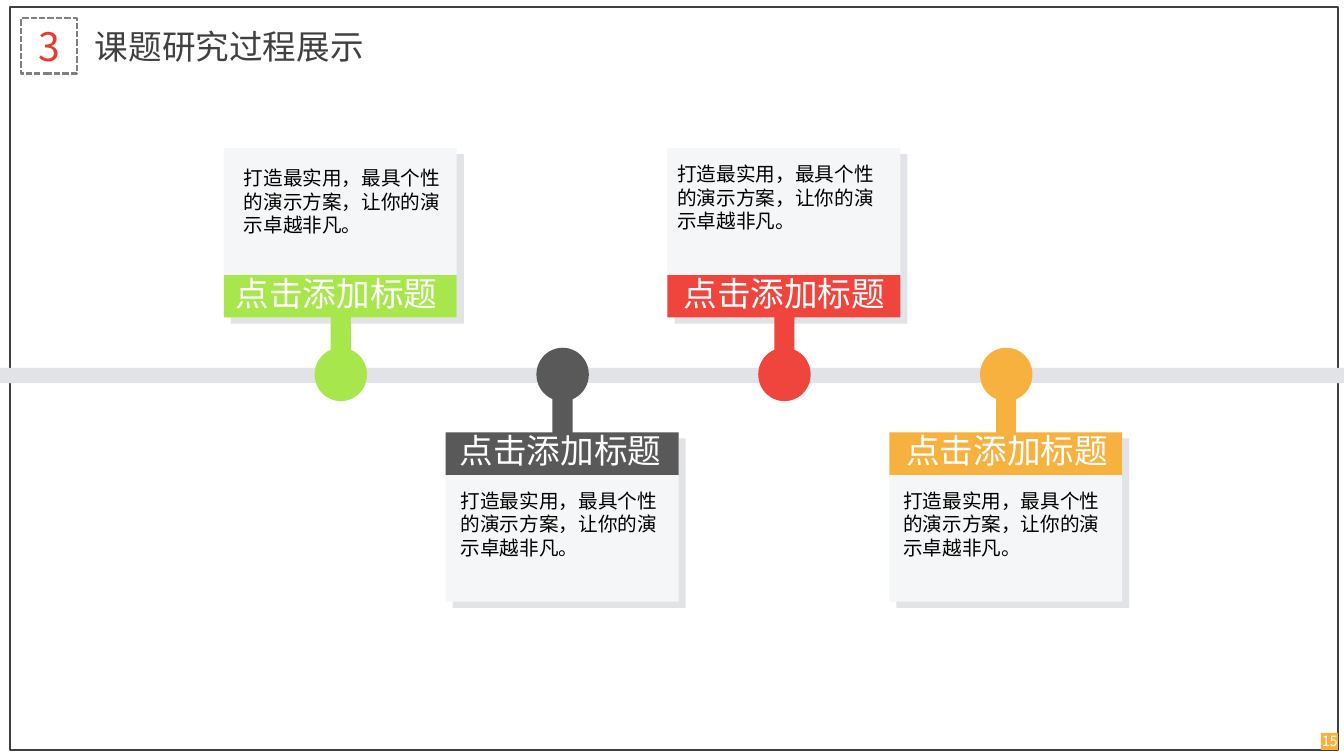
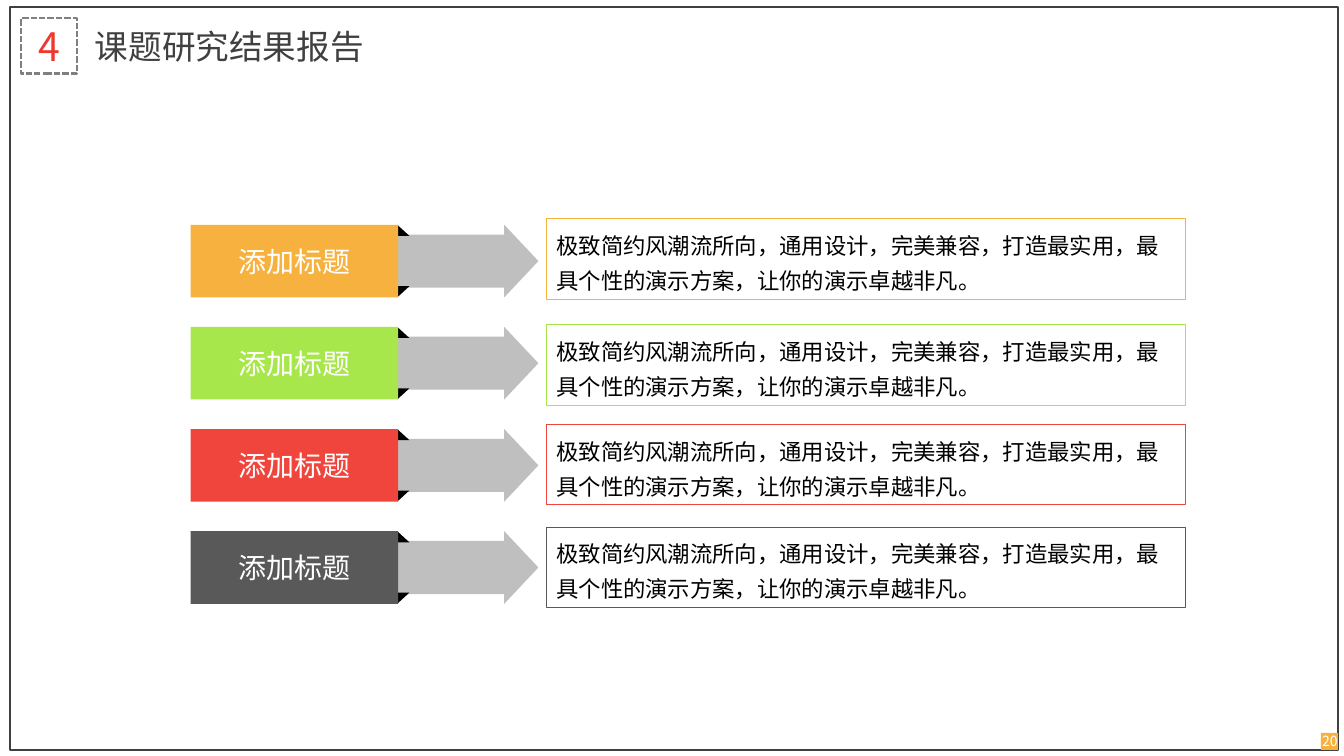
from lxml import etree
from pptx import Presentation
from pptx.dml.color import RGBColor
from pptx.enum.dml import MSO_LINE_DASH_STYLE as DASH
from pptx.enum.shapes import MSO_SHAPE as SHAPE
from pptx.enum.text import MSO_ANCHOR as ANCHOR, MSO_AUTO_SIZE as AUTO_SIZE, PP_ALIGN as ALIGN
from pptx.oxml.ns import qn
from pptx.util import Inches, Pt

# Shared palette and fonts
GREEN, GRAY, RED, ORANGE = "A8E74B", "595959", "EF453D", "F7B13F"
DARK, SILVER, PANEL = "404040", "E1E3E6", "F5F6F7"
WHITE, BLACK = "FFFFFF", "000000"
FONT, HEADING_FONT = "Noto Sans CJK SC", "TeX Gyre Adventor"
color = RGBColor.from_string


def add_box(shapes, kind, box, fill=None, line=None, line_width=1):
    shape = shapes.add_shape(kind, *[Inches(value) for value in box])
    shape.shadow.inherit = False
    if fill:
        shape.fill.solid()
        shape.fill.fore_color.rgb = color(fill)
    else:
        shape.fill.background()
    if line:
        shape.line.color.rgb = color(line)
        shape.line.width = Pt(line_width)
    else:
        shape.line.fill.background()
    return shape


def set_text(shape, text, size, text_color, font=FONT, align=ALIGN.LEFT,
             anchor=ANCHOR.MIDDLE, wrap=True, inset=None):
    frame = shape.text_frame
    frame.text = text
    frame.word_wrap = wrap
    frame.auto_size = AUTO_SIZE.NONE
    frame.vertical_anchor = anchor
    if inset is not None:
        frame.margin_left = frame.margin_right = Inches(inset)
        frame.margin_top = frame.margin_bottom = Inches(inset)
    paragraph = frame.paragraphs[0]
    paragraph.alignment = align
    run = paragraph.runs[0]
    run.font.size = Pt(size)
    run.font.name = font
    run.font.color.rgb = color(text_color)
    # East Asian characters take their own typeface entry
    etree.SubElement(run.font._element, qn("a:ea")).set("typeface", font)
    return paragraph


presentation = Presentation()
presentation.slide_width = Inches(13.33)
presentation.slide_height = Inches(7.5)

# Frame, section badge, title and page number on every slide
slides = []
for section, title_text, page in [("3", "课题研究过程展示", "15"),
                                  ("4", "课题研究结果报告", "20")]:
    slide = presentation.slides.add_slide(presentation.slide_layouts[5])
    slides.append(slide)
    add_box(slide.shapes, SHAPE.RECTANGLE, (0.1, 0.07, 13.17, 7.37), line=DARK)

    badge = add_box(slide.shapes, SHAPE.RECTANGLE, (0.21, 0.18, 0.55, 0.55),
                    line="808080", line_width=1.5)
    badge.line.dash_style = DASH.SQUARE_DOT
    set_text(badge, section, 28, "ED382D", align=ALIGN.CENTER, inset=0)

    title = slide.shapes.title
    title.left, title.top = Inches(0.84), Inches(0.18)
    title.width, title.height = Inches(3.59), Inches(0.55)
    set_text(title, title_text, 24, DARK)

    add_box(slide.shapes, SHAPE.RECTANGLE, (13.1, 7.27, 0.17, 0.17), ORANGE)
    page_number = slide.shapes.add_textbox(Inches(12.97), Inches(7.27),
                                           Inches(0.44), Inches(0.17))
    set_text(page_number, page, 10, WHITE, align=ALIGN.CENTER)

timeline, results = slides

# Timeline: cards alternate above and below the bar
add_box(timeline.shapes, SHAPE.RECTANGLE, (0, 3.65, 13.33, 0.15), SILVER)
CARD_PITCH, CARD_WIDTH, CARD_HEIGHT, BAND_HEIGHT = 2.2, 2.31, 1.68, 0.42
cards = [  # colour, heading left, body left, body top
    (GREEN, 2.24, 2.32, 1.6),
    (GRAY, 4.46, 4.47, 4.8),
    (RED, 6.68, 6.62, 1.56),
    (ORANGE, 8.89, 8.86, 4.8),
]
for index, (card_color, heading_left, body_left, body_top) in enumerate(cards):
    left = 2.22 + index * CARD_PITCH
    above = index % 2 == 0
    card_top = 1.47 if above else 4.29
    band_top = card_top + CARD_HEIGHT - BAND_HEIGHT if above else card_top
    stem_top = 3.03 if above else 3.83

    for kind, box, fill in [
        (SHAPE.OVAL, (left + 0.9, 3.45, 0.52, 0.53), card_color),
        (SHAPE.RECTANGLE, (left + 0.07, card_top + 0.06, CARD_WIDTH, CARD_HEIGHT), SILVER),
        (SHAPE.RECTANGLE, (left, card_top, CARD_WIDTH, CARD_HEIGHT), PANEL),
        (SHAPE.RECTANGLE, (left, band_top, CARD_WIDTH, BAND_HEIGHT), card_color),
        (SHAPE.RECTANGLE, (left + 1.06, stem_top, 0.2, 0.58), card_color),
    ]:
        add_box(timeline.shapes, kind, box, fill)

    heading = timeline.shapes.add_textbox(Inches(heading_left), Inches(band_top - 0.07),
                                          Inches(2.22), Inches(0.5))
    set_text(heading, "点击添加标题", 24, WHITE, HEADING_FONT, anchor=ANCHOR.TOP, wrap=False)
    body = timeline.shapes.add_textbox(Inches(body_left), Inches(body_top),
                                       Inches(2.3), Inches(0.81))
    set_text(body, "打造最实用，最具个性的演示方案，让你的演示卓越非凡。", 14, BLACK,
             anchor=ANCHOR.TOP)

# Results: a folded ribbon with an arrow leads to each outlined text
ROW_PITCH, ROW_HEIGHT = 3.04 / 3, 0.72
FOLD_WIDTH, FOLD_HEIGHT = 0.12, 0.11
rows = [(ORANGE, 2.17), (GREEN, 3.22), (RED, 4.21), (GRAY, 5.23)]
for index, (row_color, text_top) in enumerate(rows):
    top = 2.23 + index * ROW_PITCH
    arrow = add_box(results.shapes, SHAPE.RIGHT_ARROW, (3.03, top, 2.31, ROW_HEIGHT), "BFBFBF")
    arrow.adjustments[0], arrow.adjustments[1] = 0.73, 0.47

    ribbon = results.shapes.add_group_shape()
    lower_fold = add_box(ribbon.shapes, SHAPE.RIGHT_TRIANGLE,
                         (3.94, top + ROW_HEIGHT - FOLD_HEIGHT, FOLD_WIDTH, FOLD_HEIGHT), BLACK)
    lower_fold._element.spPr.find(qn("a:xfrm")).set("flipV", "1")
    add_box(ribbon.shapes, SHAPE.RIGHT_TRIANGLE, (3.94, top, FOLD_WIDTH, FOLD_HEIGHT), BLACK)
    label = add_box(ribbon.shapes, SHAPE.RECTANGLE, (1.89, top, 2.06, ROW_HEIGHT), row_color)
    set_text(label, "添加标题", 20, WHITE, align=ALIGN.CENTER, inset=0)

    description = add_box(results.shapes, SHAPE.RECTANGLE, (5.42, text_top, 6.34, 0.8),
                          line=row_color, line_width=0.75)
    paragraph = set_text(
        description,
        "极致简约风潮流所向，通用设计，完美兼容，打造最实用，最具个性的演示方案，让你的演示卓越非凡。",
        16, BLACK)
    paragraph.line_spacing = 1.3
    paragraph.space_before = paragraph.space_after = Pt(6)

presentation.save("out.pptx")
